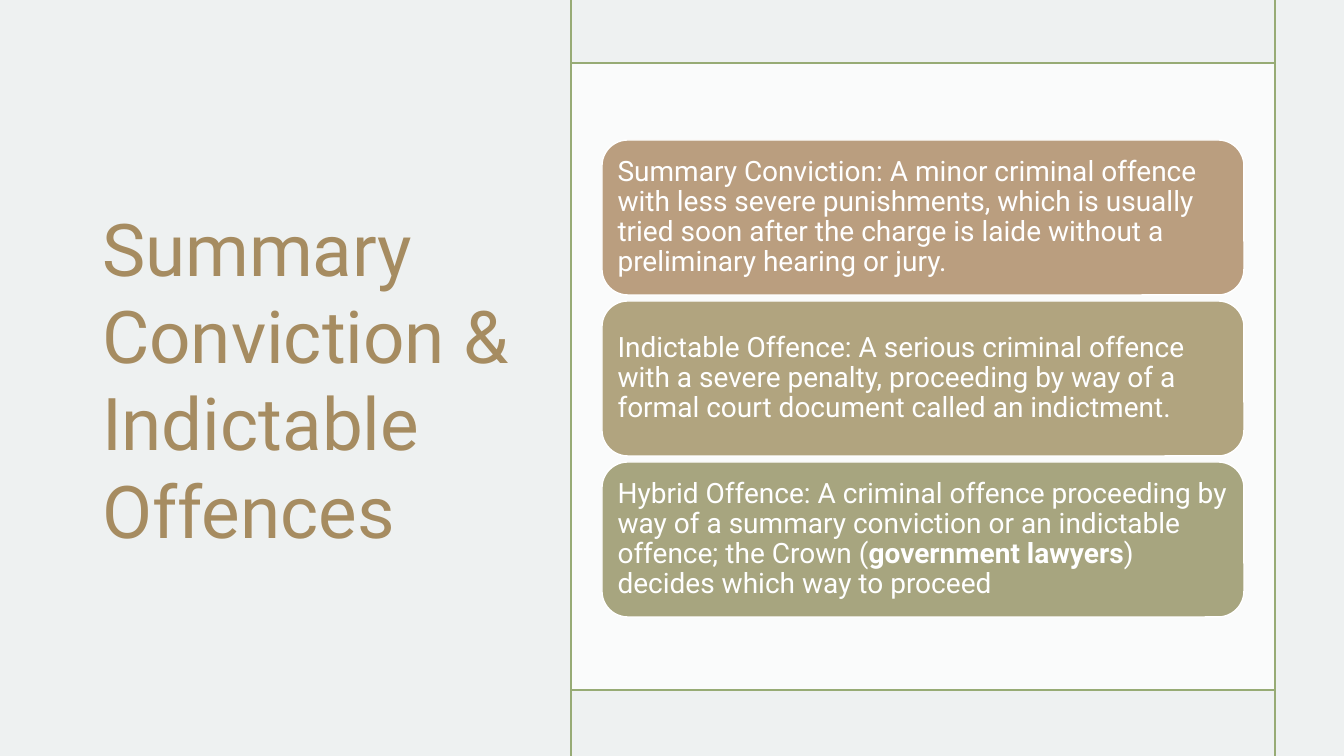
import pptx
import pptx.util
import pptx.dml.color
import pptx.enum.shapes
import pptx.enum.text
import pptx.oxml.ns
import lxml.etree

RGBColor = pptx.dml.color.RGBColor
MIST = RGBColor(0xEE, 0xF1, 0xF1)
WHITE = RGBColor(0xFF, 0xFF, 0xFF)
GREEN = RGBColor(0x97, 0xAB, 0x75)
TAN = RGBColor(0xA6, 0x8C, 0x61)
CLAY = RGBColor(0xBA, 0x9E, 0x7F)
SAND = RGBColor(0xB1, 0xA4, 0x7F)
OLIVE = RGBColor(0xA7, 0xA5, 0x7F)
FONT = "Roboto"

HEADING = "Summary Conviction & Indictable Offences"
# Each offence: fill colour, then (text, bold) pieces
OFFENCES = [
    (CLAY, [("Summary Conviction: A minor criminal offence with less severe "
             "punishments, which is usually tried soon after the charge is "
             "laide without a preliminary hearing or jury.", False)]),
    (SAND, [("Indictable Offence: A serious criminal offence with a severe "
             "penalty, proceeding by way of a formal court document called "
             "an indictment.", False)]),
    (OLIVE, [("Hybrid Offence: A criminal offence proceeding by way of a "
              "summary conviction or an indictable offence; the Crown (", False),
             ("government lawyers", True),
             (") decides which way to proceed", False)]),
]

SLIDE_W, SLIDE_H = 1344, 756
TITLE_BOX = (92, 64, 454, 628)
LEFT, TOP, RIGHT, BOTTOM = 571, 63, 1275, 690
CARD_LEFT, CARD_TOP, CARD_W, CARD_H, CARD_PITCH = 602, 140, 642, 155, 161
CARD_INSET = 8  # the rounded corners indent the text further


def px(length):
    return pptx.util.Emu(round(length * 914400 / 100.8))


def style_run(run, size, color, bold=False):
    run.font.name = FONT
    run.font.size = pptx.util.Pt(size)
    run.font.bold = bold
    run.font.color.rgb = color


def add_block(slide, preset, box, fill):
    block = slide.shapes.add_shape(preset, *map(px, box))
    block.shadow.inherit = False
    block.fill.solid()
    block.fill.fore_color.rgb = fill
    return block


def add_title(slide):
    title = slide.shapes.title
    title.left, title.top, title.width, title.height = map(px, TITLE_BOX)
    frame = title.text_frame
    frame.text = HEADING
    frame.word_wrap = True
    frame.auto_size = pptx.enum.text.MSO_AUTO_SIZE.NONE
    frame.vertical_anchor = pptx.enum.text.MSO_ANCHOR.MIDDLE
    frame.paragraphs[0].alignment = pptx.enum.text.PP_ALIGN.LEFT
    style_run(frame.paragraphs[0].runs[0], 52, TAN)


def add_panel(slide):
    panel = add_block(slide, pptx.enum.shapes.MSO_SHAPE.RECTANGLE,
                      (LEFT, TOP, RIGHT - LEFT, BOTTOM - TOP), WHITE)
    panel.line.fill.background()
    color = panel.fill._xPr.find(".//" + pptx.oxml.ns.qn("a:srgbClr"))
    lxml.etree.SubElement(color, pptx.oxml.ns.qn("a:alpha"), val="75000")


def add_rule(slide, ends):
    rule = slide.shapes.add_connector(
        pptx.enum.shapes.MSO_CONNECTOR.STRAIGHT, *map(px, ends))
    rule.line.color.rgb = GREEN
    rule.line.width = pptx.util.Pt(1)
    lxml.etree.SubElement(rule._element.spPr, pptx.oxml.ns.qn("a:effectLst"))


def add_card(slide, index, fill, pieces):
    card = add_block(slide, pptx.enum.shapes.MSO_SHAPE.ROUNDED_RECTANGLE,
                     (CARD_LEFT, CARD_TOP + index * CARD_PITCH, CARD_W, CARD_H), fill)
    card.line.color.rgb = WHITE
    card.line.width = pptx.util.Pt(1)
    frame = card.text_frame
    frame.word_wrap = True
    frame.vertical_anchor = pptx.enum.text.MSO_ANCHOR.MIDDLE
    frame.margin_left = frame.margin_right = px(CARD_INSET)
    frame.margin_top = frame.margin_bottom = px(CARD_INSET)
    paragraph = frame.paragraphs[0]
    paragraph.alignment = pptx.enum.text.PP_ALIGN.LEFT
    paragraph.line_spacing = 0.9
    for text, bold in pieces:
        run = paragraph.add_run()
        run.text = text
        style_run(run, 20, WHITE, bold)


def main():
    deck = pptx.Presentation()
    deck.slide_width, deck.slide_height = px(SLIDE_W), px(SLIDE_H)
    slide = deck.slides.add_slide(deck.slide_layouts.get_by_name("Title Only"))
    slide.background.fill.solid()
    slide.background.fill.fore_color.rgb = MIST

    add_title(slide)
    add_panel(slide)
    for y in (TOP, BOTTOM):
        add_rule(slide, (LEFT, y, RIGHT, y))
    for x in (LEFT, RIGHT):
        add_rule(slide, (x, 0, x, SLIDE_H))
    for index, (fill, pieces) in enumerate(OFFENCES):
        add_card(slide, index, fill, pieces)

    deck.save("out.pptx")


if __name__ == "__main__":
    main()
